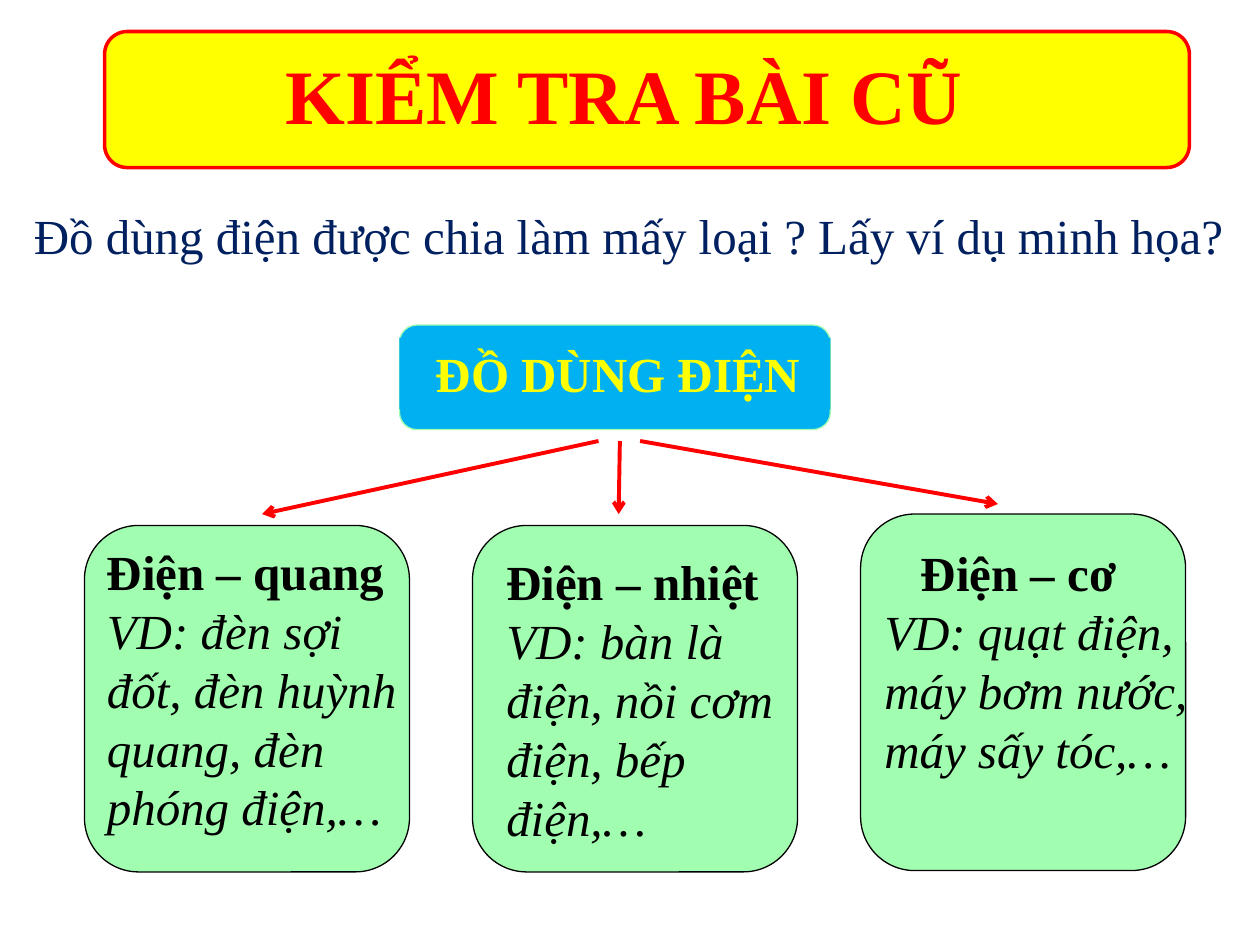
from pptx import Presentation
from pptx.dml.color import RGBColor
from pptx.enum.shapes import MSO_CONNECTOR, MSO_SHAPE
from pptx.enum.text import MSO_ANCHOR, PP_ALIGN
from pptx.oxml.ns import qn
from pptx.util import Inches, Pt
from lxml import etree

ROUND, RECT = MSO_SHAPE.ROUNDED_RECTANGLE, MSO_SHAPE.RECTANGLE
STRAIGHT = MSO_CONNECTOR.STRAIGHT
LEFT, TOP = PP_ALIGN.LEFT, MSO_ANCHOR.TOP

THEME = {
    "font": "Times New Roman", "title": 44, "body": 28,
    "red": "FF0000", "yellow": "FFFF00", "navy": "002060",
    "blue": "00B0F0", "green": "A1FDB0", "black": "000000",
}

TITLE = "KIỂM TRA BÀI CŨ"
ASK = "Đồ dùng điện được chia làm mấy loại ? Lấy ví dụ minh họa?"
ROOT = "ĐỒ DÙNG ĐIỆN"
# heading, examples, heading indent, card top and height, text box
KINDS = [
    ("Điện – quang", "VD: đèn sợi đốt, đèn huỳnh quang, đèn phóng điện,…",
     0, (4.17, 2.75), (0.75, 4.25, 2.5, 2.46)),
    ("Điện – nhiệt", "VD: bàn là điện, nồi cơm điện, bếp điện,…",
     0, (4.17, 2.75), (3.92, 4.33, 2.67, 2.38)),
    ("Điện – cơ", "VD: quạt điện, máy bơm nước, máy sấy tóc,…",
     0.29, (4.08, 2.83), (6.92, 4.26, 3, 1.99)),
]
CARD_X, CARD_W, STEP = 0.67, 2.58, 3.08
ARROW_Y = 3.5
ARROWS = [(5.08, 7.92, 4), (4.92, 4.91, 4.08), (4.75, 2.08, 4.08)]


def color(name):
    return RGBColor.from_string(THEME[name])


def add_box(shapes, kind, at, fill, line=None, width=0.75):
    box = shapes.add_shape(kind, *map(Inches, at))
    box.shadow.inherit = False
    box.fill.solid()
    box.fill.fore_color.rgb = color(fill)
    if line:
        box.line.color.rgb = color(line)
        box.line.width = Pt(width)
    else:
        box.line.fill.background()
    return box


def write(shape, lines):
    """Fill a shape with (text, size, colour, bold, italic) lines."""
    frame = shape.text_frame
    frame.word_wrap = True
    frame.vertical_anchor = TOP
    frame.text = "\n".join(line[0] for line in lines)
    for para, (_, size, hue, bold, slant) in zip(frame.paragraphs, lines):
        para.alignment = LEFT
        font = para.runs[0].font
        font.name, font.size = THEME["font"], Pt(THEME[size])
        font.color.rgb = color(hue)
        font.bold, font.italic = bold, slant
    return frame


def add_text(shapes, at, lines):
    return write(shapes.add_textbox(*map(Inches, at)), lines)


def add_arrow(shapes, start, end):
    arrow = shapes.add_connector(STRAIGHT, *map(Inches, start + end))
    arrow.line.color.rgb = color("red")
    arrow.line.width = Pt(2.25)
    tip = etree.SubElement(arrow.line._get_or_add_ln(), qn("a:tailEnd"))
    tip.set("type", "arrow")
    etree.SubElement(arrow._element.spPr, qn("a:effectLst"))


def add_root(shapes):
    group = shapes.add_group_shape().shapes
    add_box(group, ROUND, (3.17, 2.58, 3.42, 0.83), "blue", "green")
    band = add_box(group, RECT, (3.17, 2.68, 3.42, 0.57), "blue")
    frame = write(band, [(ROOT, "body", "yellow", True, False)])
    frame.margin_left = Inches(0.29)


def add_card(shapes, left, head, note, indent, span, at):
    group = shapes.add_group_shape().shapes
    top, height = span
    add_box(group, ROUND, (left, top, CARD_W, height), "green", "black")
    frame = add_text(group, at, [
        (head, "body", "black", True, False),
        (note, "body", "black", False, True),
    ])
    if indent:
        props = frame.paragraphs[0]._p.get_or_add_pPr()
        props.set("indent", str(Inches(indent)))


def main():
    deck = Presentation()
    deck.slide_width, deck.slide_height = Inches(10), Inches(7.5)
    shapes = deck.slides.add_slide(deck.slide_layouts[6]).shapes

    add_box(shapes, ROUND, (0.83, 0.25, 8.61, 1.08), "yellow", "red", 2)
    add_text(shapes, (2.17, 0.33, 6.93, 0.84),
             [(TITLE, "title", "red", True, False)])
    add_text(shapes, (0.17, 1.58, 9.67, 0.57),
             [(ASK, "body", "navy", False, False)])
    add_root(shapes)
    for i, kind in enumerate(KINDS):
        add_card(shapes, CARD_X + i * STEP, *kind)
    for start, end, drop in ARROWS:
        add_arrow(shapes, (start, ARROW_Y), (end, drop))

    deck.save("out.pptx")


if __name__ == "__main__":
    main()
